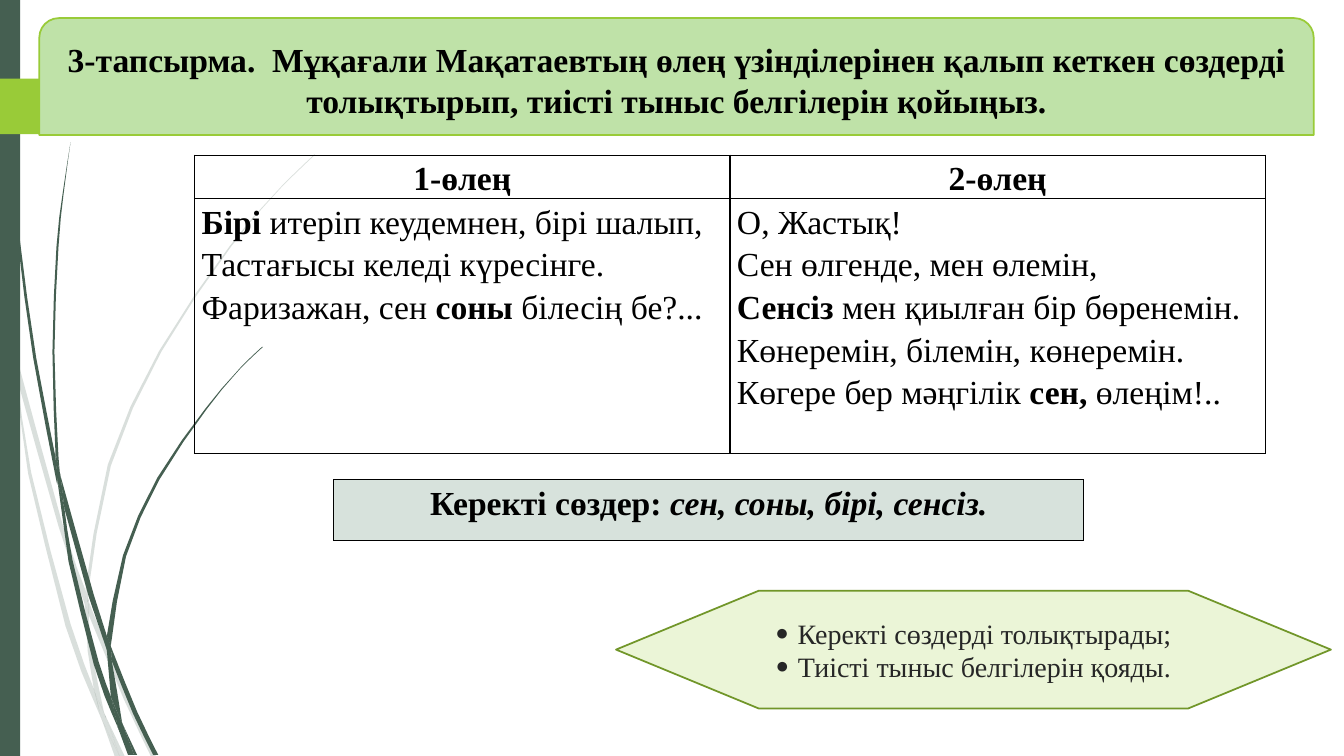
import lxml.etree
import pptx
import pptx.dml.color
import pptx.enum.shapes
import pptx.enum.text
import pptx.oxml
import pptx.oxml.ns
import pptx.util
from dataclasses import dataclass

Inches = pptx.util.Inches
Pt = pptx.util.Pt
qn = pptx.oxml.ns.qn
SHAPE = pptx.enum.shapes.MSO_SHAPE
CENTER = pptx.enum.text.PP_ALIGN.CENTER
LEFT = pptx.enum.text.PP_ALIGN.LEFT
MIDDLE = pptx.enum.text.MSO_ANCHOR.MIDDLE


@dataclass(frozen=True)
class Theme:
    font: str = "Times New Roman"
    body: int = 24
    note: int = 20
    outline: float = 1.25
    border: int = 1
    spacing: float = 1.15
    dark: str = "455F51"
    green: str = "99CB38"
    title_fill: str = "BFE2A8"
    words_fill: str = "D7E2DC"
    note_fill: str = "EBF5D7"
    note_line: str = "719629"
    ink: str = "000000"
    note_ink: str = "262626"


THEME = Theme()

# Each piece of grass: right edge going down, left edge going down (inches)
PALE_GRASS = [
    ([(0, 2.82), (.09, 3.22), (.11, 3.5)], [(0, 2.99), (.1, 3.44)]),
    ([(.14, 3.45), (.62, 5.2), (.85, 5.86)], [(.17, 3.76), (.58, 5.22), (.84, 5.99)]),
    ([(.88, 5.96), (.92, 6.07), (1.27, 6.92), (1.55, 7.51)], [(.88, 6.1), (1.23, 6.94), (1.5, 7.51)]),
    ([(1.05, 7.11), (1.24, 7.51)], [(1.19, 7.51)]),
    ([(.11, 3.5), (.17, 3.76), (.31, 4.69), (.7, 6.19), (.93, 6.83), (.99, 7.07), (1.01, 7.14)],
     [(.28, 4.7), (.65, 6.21), (.92, 6.93)]),
    ([(.84, 5.99), (.88, 6.08), (.88, 6.1), (.91, 6.46), (1.03, 7.06), (1.05, 7.11)],
     [(.87, 6.46), (.93, 6.83), (.96, 6.92)]),
    ([(3.12, 1.54), (2.9, 1.75), (2.68, 1.98), (2.29, 2.45), (1.6, 3.49), (1.1, 4.62), (.88, 5.84), (.88, 5.96)],
     [(3.12, 1.53), (2.89, 1.75), (2.68, 1.97), (2.28, 2.44), (1.58, 3.48), (1.07, 4.61), (.85, 5.84)]),
    ([(1.01, 7.14), (1.19, 7.51)], [(1.14, 7.51)]),
    ([(.85, 5.86), (.88, 5.96), (.88, 6.1)], [(.84, 5.99), (.88, 6.08)]),
    ([(.93, 6.83), (.96, 6.92), (1.05, 7.11), (1.19, 7.51)], [(.99, 7.07), (1.01, 7.14)]),
]
DARK_GRASS = [
    ([(.04, 0), (.05, .48), (.08, 1.09), (.19, 2.32), (.36, 3.55), (.55, 4.53), (.57, 4.81)],
     [(.03, 0), (.04, .48), (.07, 1.1), (.17, 2.33), (.33, 3.55), (.56, 4.77)]),
    ([(.6, 4.72), (.93, 5.9), (1.06, 6.31), (1.06, 6.45)], [(.64, 5.05), (.88, 5.92)]),
    ([(1.1, 6.41), (1.13, 6.49), (1.36, 7.06), (1.57, 7.49)], [(1.11, 6.56), (1.32, 7.08), (1.52, 7.49)]),
    ([(.57, 4.77), (.64, 5.05), (.72, 5.56), (.98, 6.57), (1.1, 6.91), (1.17, 7.22)],
     [(.68, 5.57), (.93, 6.59), (1.11, 7.08)]),
    ([(.7, 1.41), (.63, 1.93), (.58, 2.45), (.54, 3.49), (.58, 4.53), (.6, 4.72)],
     [(.7, 1.41), (.62, 1.93), (.56, 2.45), (.52, 3.49), (.55, 4.49)]),
    ([(1.22, 7.19), (1.36, 7.49)], [(1.33, 7.49)]),
    ([(.55, 4.49), (.6, 4.72), (.64, 5.05)], [(.55, 4.53), (.57, 4.77)]),
    ([(2.61, 3.44), (2.45, 3.59), (2.31, 3.74), (2.05, 4.06), (1.58, 4.76), (1.25, 5.52), (1.11, 6.33), (1.1, 6.41)],
     [(2.6, 3.44), (2.45, 3.58), (2.31, 3.73), (2.04, 4.05), (1.56, 4.74), (1.22, 5.51), (1.06, 6.31)]),
    ([(1.17, 7.22), (1.31, 7.49)], [(1.27, 7.49)]),
    ([(1.06, 6.45), (1.11, 6.56), (1.21, 7.16), (1.22, 7.19)], [(1.1, 6.91), (1.16, 7.06)]),
    ([(1.06, 6.31), (1.1, 6.41), (1.11, 6.56)], [(1.06, 6.33), (1.06, 6.45)]),
    ([(1.1, 6.91), (1.16, 7.06), (1.22, 7.19), (1.33, 7.49)], [(1.17, 7.22), (1.3, 7.49)]),
]

# Poem lines as (text, bold) runs
POEMS = [
    ("1-өлең", [
        [("Бірі ", True), ("итеріп кеудемнен, бірі шалып,", False)],
        [("Тастағысы келеді күресінге.", False)],
        [("Фаризажан, сен ", False), ("соны ", True), ("білесің бе?...", False)]]),
    ("2-өлең", [
        [("О, Жастық!", False)],
        [("Сен өлгенде, мен өлемін,", False)],
        [("Сенсіз ", True), ("мен қиылған бір бөренемін.", False)],
        [("Көнеремін, білемін, көнеремін.", False)],
        [("Көгере бер мәңгілік ", False), ("сен, ", True), ("өлеңім!..", False)]]),
]


def rgb(color):
    return pptx.dml.color.RGBColor.from_string(color)


def style(sp, fill, line=None):
    sp.shadow.inherit = False
    sp.fill.solid()
    sp.fill.fore_color.rgb = rgb(fill)
    if line:
        sp.line.color.rgb = rgb(line)
        sp.line.width = Pt(THEME.outline)
    else:
        sp.line.fill.background()


def add_shape(s, kind, box, fill, line=None):
    sp = s.shapes.add_shape(kind, *map(Inches, box))
    style(sp, fill, line)
    return sp


def write(tf, lines, align, size=THEME.body, color=THEME.ink, spacing=None):
    """Fill a frame with lines of (text, bold[, italic]) runs."""
    tf.word_wrap = True
    for i, runs in enumerate(lines):
        p = tf.paragraphs[0] if i == 0 else tf.add_paragraph()
        p.alignment = align
        p.line_spacing = spacing
        for text, bold, *italic in runs:
            r = p.add_run()
            r.text = text
            r.font.name, r.font.size = THEME.font, Pt(size)
            r.font.bold, r.font.italic = bold, bool(italic)
            r.font.color.rgb = rgb(color)


def smooth(points):
    """Add a curved midpoint between each pair of neighbours."""
    padded = [points[0], *points, points[-1]]
    curve = [points[0]]
    for a, b, c, d in zip(padded, padded[1:], padded[2:], padded[3:]):
        curve += [tuple((9 * (q + r) - p - u) / 16 for p, q, r, u in zip(a, b, c, d)), c]
    return curve


def add_grass(s, right, left, x0, y0, alpha=None):
    outline = [(Inches(x0 + x), Inches(y0 + y)) for x, y in smooth(right) + smooth(left)[::-1]]
    fb = s.shapes.build_freeform(*outline[0], scale=1.0)
    fb.add_line_segments(outline[1:], close=True)
    sp = fb.convert_to_shape()
    style(sp, THEME.dark)
    if alpha:
        clr = sp._element.spPr.find(".//" + qn("a:srgbClr"))
        lxml.etree.SubElement(clr, qn("a:alpha"), val=str(alpha * 1000))


def add_side_decoration(s, box):
    x, y, w, h = box
    for pieces, alpha in ((PALE_GRASS, 20), (DARK_GRASS, None)):
        for right, left in pieces:
            add_grass(s, right, left, x, y, alpha)
    add_shape(s, SHAPE.RECTANGLE, (x, y, 0.2, h), THEME.dark)
    add_shape(s, SHAPE.PENTAGON, (x, y + 0.78, w, 0.55), THEME.green)


def add_title(s, box):
    sp = add_shape(s, SHAPE.ROUND_2_SAME_RECTANGLE, box, THEME.title_fill, THEME.green)
    sp.text_frame.vertical_anchor = MIDDLE
    write(sp.text_frame, [[("3-тапсырма.  Мұқағали Мақатаевтың өлең үзінділерінен қалып кеткен "
                            "сөздерді толықтырып, тиісті тыныс белгілерін қойыңыз.", True)]], CENTER)


def add_bordered_table(s, box, row_heights, cols):
    tbl = s.shapes.add_table(len(row_heights), cols, *map(Inches, box)).table
    tbl.first_row = tbl.horz_banding = False
    for row, height in zip(tbl.rows, row_heights):
        row.height = Inches(height)
    for cell in tbl.iter_cells():
        cell.margin_left = cell.margin_right = Inches(0.07)
        cell.margin_top = cell.margin_bottom = 0
        for side in "LRTB":
            cell._tc.get_or_add_tcPr().append(pptx.oxml.parse_xml(
                f'<a:ln{side} {pptx.oxml.ns.nsdecls("a")} w="{Pt(THEME.border)}"><a:solidFill>'
                f'<a:srgbClr val="{THEME.ink}"/></a:solidFill></a:ln{side}>'))
        cell.fill.background()
    return tbl


def add_poems(s, box):
    header = 0.43
    tbl = add_bordered_table(s, box, (header, box[3] - header), len(POEMS))
    for col, (name, lines) in enumerate(POEMS):
        write(tbl.cell(0, col).text_frame, [[(name, True)]], CENTER, spacing=THEME.spacing)
        write(tbl.cell(1, col).text_frame, lines, LEFT, spacing=THEME.spacing)


def add_word_bank(s, box):
    cell = add_bordered_table(s, box, (box[3],), 1).cell(0, 0)
    cell.fill.solid()
    cell.fill.fore_color.rgb = rgb(THEME.words_fill)
    write(cell.text_frame, [[("Керекті сөздер: ", True), ("сен, соны, бірі, сенсіз.", True, True)]],
          CENTER, spacing=THEME.spacing)


def add_criteria(s, box):
    tf = add_shape(s, SHAPE.FLOWCHART_PREPARATION, box, THEME.note_fill, THEME.note_line).text_frame
    tf.vertical_anchor = MIDDLE
    write(tf, [[("Керекті сөздерді толықтырады;", False)], [("Тиісті тыныс белгілерін қояды.", False)]],
          CENTER, THEME.note, THEME.note_ink)
    for p in tf.paragraphs:
        pPr = p._p.get_or_add_pPr()
        pPr.set("marL", str(Inches(0.22)))
        pPr.set("indent", str(-Inches(0.22)))
        lxml.etree.SubElement(pPr, qn("a:buSzPct"), val="80000")
        lxml.etree.SubElement(pPr, qn("a:buFont"), typeface=THEME.font)
        lxml.etree.SubElement(pPr, qn("a:buChar"), char="●")


prs = pptx.Presentation()
prs.slide_width, prs.slide_height = Inches(13.33), Inches(7.5)
s = prs.slides.add_slide(prs.slide_layouts[6])
add_side_decoration(s, (0, 0, 1.74, 7.5))
add_poems(s, (1.93, 1.54, 10.62, 2.96))
add_title(s, (0.39, 0.18, 12.64, 1.16))
add_word_bank(s, (3.31, 4.76, 7.44, 0.6))
add_criteria(s, (6.11, 5.86, 7.09, 1.17))
prs.save("out.pptx")
